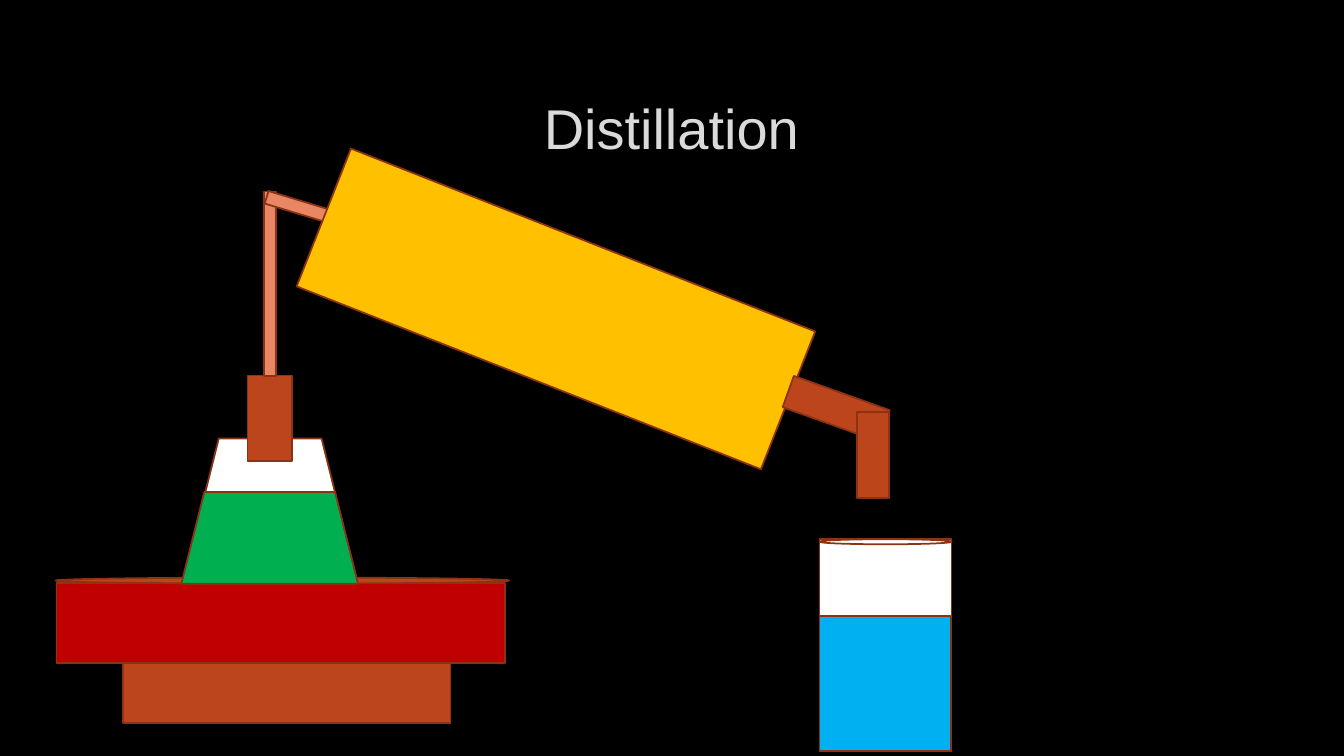
from dataclasses import dataclass

from lxml import etree
from pptx import Presentation
from pptx.dml.color import RGBColor
from pptx.enum import shapes, text
from pptx.oxml import ns
from pptx.slide import Slide
from pptx.util import Emu, Inches, Pt

SLIDE_W, SLIDE_H = Inches(13.33), Inches(7.5)

BLACK, WHITE, TITLE_GREY, OUTLINE_GREY = "000000", "FFFFFF", "DADADA", "404040"
RUST, EDGE, SALMON = "BC451B", "8B3314", "E98764"
RED, GREEN, AMBER, BLUE = "C00000", "00B050", "FFC000", "00B0F0"

RECT = shapes.MSO_SHAPE.RECTANGLE
OVAL = shapes.MSO_SHAPE.OVAL
TRAPEZOID = shapes.MSO_SHAPE.TRAPEZOID


@dataclass(frozen=True)
class Box:
    """Left, top, width and height in percent of the slide."""
    left: float
    top: float
    width: float
    height: float

    def emu(self) -> tuple[Emu, ...]:
        sides = (SLIDE_W, SLIDE_H, SLIDE_W, SLIDE_H)
        shares = (self.left, self.top, self.width, self.height)
        return tuple(Emu(round(side * share / 100)) for side, share in zip(sides, shares))


@dataclass(frozen=True)
class Part:
    """One piece of the apparatus."""
    box: Box
    fill: str
    preset: shapes.MSO_SHAPE = RECT
    tilt: float = 0


# Apparatus, from back to front
HOT_PLATE = [
    Part(Box(9.15, 87.73, 24.38, 7.87), RUST),
    Part(Box(4.2, 77.07, 33.38, 10.67), RED),
    Part(Box(4.13, 76.4, 33.75, 0.8), RUST, OVAL),
]
FLASK = [
    Part(Box(13.58, 58, 13.05, 19.2), WHITE, TRAPEZOID),
    Part(Box(13.5, 65.07, 13.13, 12.13), GREEN, TRAPEZOID),
    Part(Box(16.88, 52.4, 6.38, 5.87), RUST, tilt=90),
]
VAPOUR_TUBE = [
    Part(Box(19.65, 25.33, 0.9, 24.4), SALMON),
    Part(Box(19.73, 26.53, 5.03, 1.73), SALMON, tilt=16.9),
]
CONDENSER = [
    Part(Box(22.8, 31.07, 37.13, 19.6), AMBER, tilt=21.5),
    Part(Box(58.43, 51.87, 7.58, 4.4), RUST, tilt=19.7),
    Part(Box(63.75, 54.53, 2.4, 11.33), RUST),
]
BEAKER = [
    Part(Box(60.98, 71.33, 9.83, 28), WHITE),
    Part(Box(60.98, 81.47, 9.75, 17.87), BLUE),
    Part(Box(60.98, 71.33, 9.83, 0.67), WHITE, OVAL),
]


def paint(target, colour: str) -> None:
    """Give a fill a solid colour."""
    target.solid()
    target.fore_color.rgb = RGBColor.from_string(colour)


def add_part(slide: Slide, part: Part) -> None:
    piece = slide.shapes.add_shape(part.preset, *part.box.emu())
    piece.rotation = part.tilt
    piece.shadow.inherit = False
    paint(piece.fill, part.fill)
    paint(piece.line.fill, EDGE)
    piece.line.width = Pt(1.25)


def add_text(slide: Slide, words: str, box: Box, *, size: float, colour: str,
             outline: str, font: str = "Arial") -> None:
    frame = slide.shapes.add_textbox(*box.emu()).text_frame
    frame.word_wrap = True
    frame.vertical_anchor = text.MSO_ANCHOR.MIDDLE
    paragraph = frame.paragraphs[0]
    paragraph.alignment = text.PP_ALIGN.CENTER
    run = paragraph.add_run()
    run.text = words
    run.font.name = font
    run.font.size = Pt(size)
    paint(run.font.fill, colour)

    # Faint outline round the letters
    edge = etree.Element(ns.qn("a:ln"), w=str(Pt(0.75)))
    solid = etree.SubElement(edge, ns.qn("a:solidFill"))
    tint = etree.SubElement(solid, ns.qn("a:srgbClr"), val=outline)
    etree.SubElement(tint, ns.qn("a:alpha"), val="10000")
    run.font._element.insert(0, edge)


def main() -> None:
    deck = Presentation()
    deck.slide_width, deck.slide_height = SLIDE_W, SLIDE_H
    slide = deck.slides.add_slide(deck.slide_layouts[6])
    paint(slide.background.fill, BLACK)

    add_text(slide, "Distillation", Box(7.5, 9.73, 84.9, 14.13),
             size=40, colour=TITLE_GREY, outline=OUTLINE_GREY)
    for part in HOT_PLATE + FLASK + VAPOUR_TUBE + CONDENSER + BEAKER:
        add_part(slide, part)

    deck.save("out.pptx")


if __name__ == "__main__":
    main()
